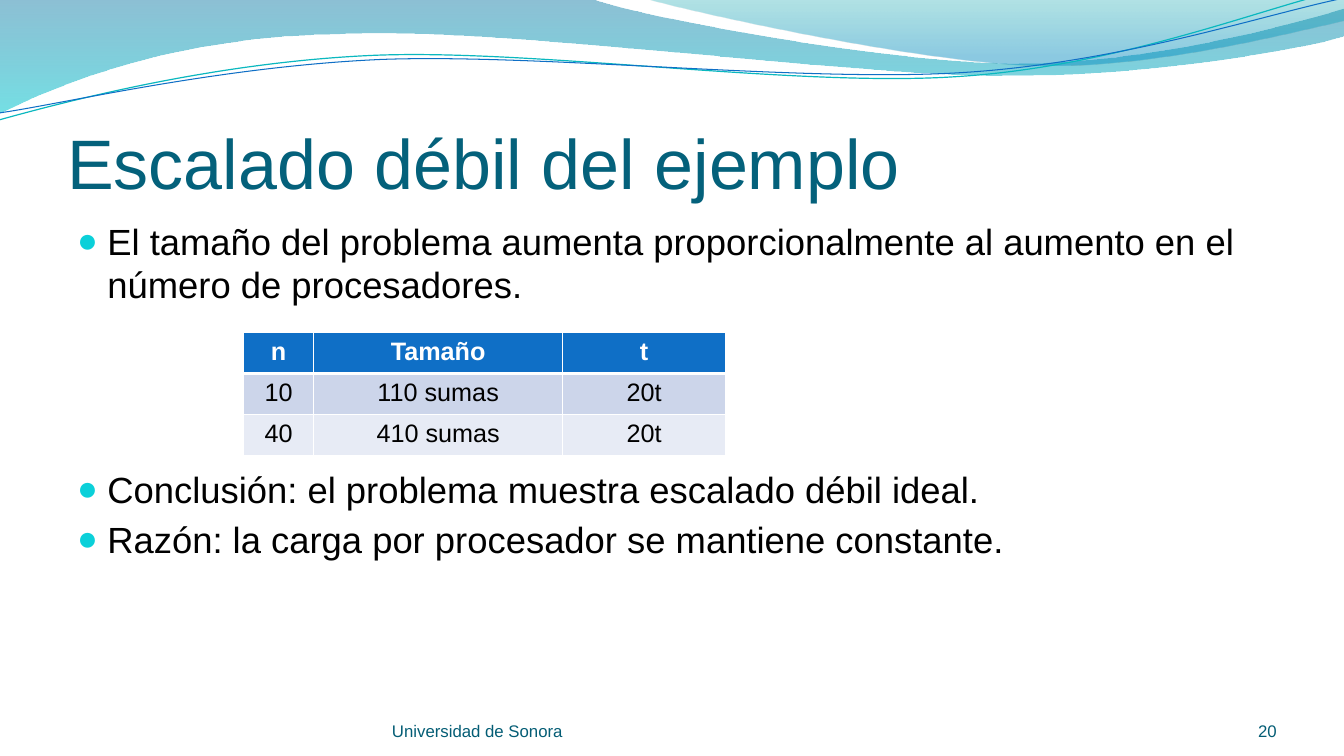
"""Build the weak scaling slide: waves, title, bullets, results table and footer."""
import math
from dataclasses import dataclass
from typing import NamedTuple

from lxml import etree
from pptx import Presentation, util as u
from pptx.dml.color import RGBColor
from pptx.enum import text as t
from pptx.oxml import ns

WIDTH, HEIGHT = u.Inches(13.33), u.Inches(7.5)


@dataclass(frozen=True)
class Theme:
    font: str = "Arial"
    title: str = "04617B"
    footer: str = "045D75"
    body: str = "000000"
    bullet: str = "0BD0D9"
    white: str = "FFFFFF"
    header: str = "0F6FC6"
    bands: tuple = ("CCD5EA", "E7EBF5")
    teal_line: str = "0AB8BF"
    title_size: float = 50
    body_size: float = 26
    table_size: float = 18
    footer_size: float = 12


THEME = Theme()


class Stop(NamedTuple):
    color: str
    position: float
    opacity: int


class Wave(NamedTuple):
    """Segments hold one point for a line and three for a Bézier curve, in percent."""
    start: tuple
    segments: tuple
    stops: tuple = ()
    line: str = ""
    weight: float = 0
    tilt: float = 0
    pivot: tuple = (0, 0)


class Label(NamedTuple):
    """A text box placed in percent of the slide."""
    text: str
    left: float
    top: float
    width: float
    height: float
    size: float
    color: str
    top_inset: float = 0
    align: t.PP_ALIGN = t.PP_ALIGN.LEFT


class Bullet(NamedTuple):
    text: str
    space_before: float


WAVES = (
    Wave((0, 0), (
        ((44, -0.13),),
        ((47.55, 2.27), (66.38, 8.4), (75.83, 8.4)),
        ((85.36, 8.4), (95.85, 3.47), (100, 1.2)),
        ((100.13, 4.8),),
        ((98.33, 5.87), (87, 10.13), (74.55, 10)),
        ((62.18, 10), (38.18, 3.73), (25.73, 4.53)),
        ((12.9, 4.8), (4.58, 11.07), (-0.08, 15.07)),
        ((0, 0),),
    ), stops=(Stop("0074A1", 0, 45), Stop("00C6CF", 1, 55))),
    Wave((47.93, -0.13), (
        ((50.93, 1.47), (68.18, 8.27), (76.88, 8.67)),
        ((85.58, 9.2), (96.15, 4.27), (100, 2.8)),
        ((100, 0),),
        ((47.93, -0.13),),
    ), stops=(Stop("00A1A9", 0, 30), Stop("008BBF", 0.8, 45))),
    Wave((-0.08, 15.87), (
        ((4.8, 13.47), (15.83, 8.27), (27.68, 7.33)),
        ((39.53, 6.4), (59.25, 11.6), (71.25, 10.13)),
        ((83.25, 8.8), (93.9, 1.07), (99.83, -1.33)),
    ), line=THEME.teal_line, weight=0.85, tilt=-2.7, pivot=(49.88, 7.67)),
    Wave((0, 14.93), (
        ((4.73, 13.73), (16.35, 8.8), (28.35, 7.87)),
        ((40.28, 7.07), (59.7, 10.93), (71.63, 9.6)),
        ((83.63, 8.27), (94.13, 1.87), (100.05, -0.27)),
    ), line=THEME.header, weight=0.75, tilt=-2.7, pivot=(50.03, 7.87)),
)
LABELS = (
    Label("Escalado débil del ejemplo", 5, 10.27, 90, 16.67,
          THEME.title_size, THEME.title, top_inset=0.05),
    Label("Universidad de Sonora", 29.17, 92.67, 36.67, 5.33, THEME.footer_size, THEME.footer),
    Label("20", 86.7, 92.67, 8.3, 5.33, THEME.footer_size, THEME.footer,
          align=t.PP_ALIGN.RIGHT),
)
BULLETS = (
    Bullet("El tamaño del problema aumenta proporcionalmente al aumento en el "
           "número de procesadores.", 4.7),
    Bullet("Conclusión: el problema muestra escalado débil ideal.", 114.8),
    Bullet("Razón: la carga por procesador se mantiene constante.", 4.7),
)
RESULTS = (("n", "Tamaño", "t"), ("10", "110 sumas", "20t"), ("40", "410 sumas", "20t"))
COLUMN_SHARES = (5.2, 18.55, 12.1)
ROW_SHARE = 5.42


def across(share: float) -> int:
    return round(WIDTH * share / 100)


def down(share: float) -> int:
    return round(HEIGHT * share / 100)


def rgb(color: str) -> RGBColor:
    return RGBColor.from_string(color)


def add_xml(parent, tag: str, **attributes):
    return etree.SubElement(parent, ns.qn(tag), attributes)


def level(point: tuple, wave: Wave) -> tuple:
    """Return the place of a point before the wave is tilted about its pivot."""
    center_x, center_y = across(wave.pivot[0]), down(wave.pivot[1])
    x, y = across(point[0]) - center_x, down(point[1]) - center_y
    sine, cosine = math.sin(math.radians(-wave.tilt)), math.cos(math.radians(wave.tilt))
    return round(center_x + cosine * x - sine * y), round(center_y + sine * x + cosine * y)


def bend(shape, wave: Wave) -> None:
    """Join each three steps of a curved segment into one Bézier curve."""
    steps = iter(list(shape.element.iter(ns.qn("a:lnTo"))))
    for segment in wave.segments:
        first, *others = [next(steps) for _ in segment]
        if others:
            first.tag = ns.qn("a:cubicBezTo")
            for other in others:
                first.append(other[0])
                other.getparent().remove(other)


def draw_wave(slide, wave: Wave) -> None:
    points = [level(point, wave) for segment in wave.segments for point in segment]
    builder = slide.shapes.build_freeform(*level(wave.start, wave))
    builder.add_line_segments(points, close=bool(wave.stops))
    shape = builder.convert_to_shape()
    bend(shape, wave)
    shape.rotation = wave.tilt
    shape.shadow.inherit = False
    if wave.line:
        shape.fill.background()
        shape.line.color.rgb = rgb(wave.line)
        shape.line.width = u.Pt(wave.weight)
        return
    shape.line.fill.background()
    shape.fill.gradient()
    shape.fill.gradient_angle = 270
    for target, stop in zip(shape.fill.gradient_stops, wave.stops):
        target.color.rgb = rgb(stop.color)
        target.position = stop.position
    for color, stop in zip(shape.element.iter(ns.qn("a:srgbClr")), wave.stops):
        add_xml(color, "a:alpha", val=str(stop.opacity * 1000))


def style_font(paragraph, size: float, color: str, bold: bool = False) -> None:
    for run in paragraph.runs:
        run.font.name, run.font.size, run.font.bold = THEME.font, u.Pt(size), bold
        run.font.color.rgb = rgb(color)


def draw_label(slide, label: Label) -> None:
    frame = slide.shapes.add_textbox(across(label.left), down(label.top), across(label.width),
                                     down(label.height)).text_frame
    frame.word_wrap = True
    frame.vertical_anchor = t.MSO_ANCHOR.BOTTOM
    frame.margin_left = frame.margin_right = frame.margin_bottom = 0
    frame.margin_top = u.Inches(label.top_inset)
    frame.text = label.text
    frame.paragraphs[0].alignment = label.align
    style_font(frame.paragraphs[0], label.size, label.color)


def draw_bullets(slide) -> None:
    frame = slide.shapes.add_textbox(across(5), down(28.27), across(90), down(64)).text_frame
    frame.word_wrap = True
    frame.text = "\n".join(bullet.text for bullet in BULLETS)
    indent = u.Inches(0.3)
    for paragraph, bullet in zip(frame.paragraphs, BULLETS):
        paragraph.space_before = u.Pt(bullet.space_before)
        style_font(paragraph, THEME.body_size, THEME.body)
        properties = paragraph._p.get_or_add_pPr()
        properties.set("marL", str(indent))
        properties.set("indent", str(-indent))
        add_xml(add_xml(properties, "a:buClr"), "a:srgbClr", val=THEME.bullet)
        add_xml(properties, "a:buSzPct", val="95000")
        add_xml(properties, "a:buFont", typeface=THEME.font)
        add_xml(properties, "a:buChar", char="●")


def set_borders(cell, top: float, bottom: float) -> None:
    properties = cell._tc.get_or_add_tcPr()
    for tag, points in (("a:lnL", 1), ("a:lnR", 1), ("a:lnT", top), ("a:lnB", bottom)):
        border = add_xml(properties, tag, w=str(u.Pt(points)))
        add_xml(add_xml(border, "a:solidFill"), "a:srgbClr", val=THEME.white)


def draw_results(slide) -> None:
    table = slide.shapes.add_table(len(RESULTS), len(COLUMN_SHARES), across(18.13), down(44),
                                   across(sum(COLUMN_SHARES)),
                                   down(ROW_SHARE * len(RESULTS))).table
    for column, share in zip(table.columns, COLUMN_SHARES):
        column.width = across(share)
    fills = (THEME.header, *THEME.bands)
    for row, values in enumerate(RESULTS):
        table.rows[row].height = down(ROW_SHARE)
        for column, value in enumerate(values):
            cell = table.cell(row, column)
            set_borders(cell, 3 if row == 1 else 1, 3 if row == 0 else 1)
            cell.fill.solid()
            cell.fill.fore_color.rgb = rgb(fills[row])
            cell.text_frame.text = value
            paragraph = cell.text_frame.paragraphs[0]
            paragraph.alignment = t.PP_ALIGN.CENTER
            style_font(paragraph, THEME.table_size, THEME.body if row else THEME.white, row == 0)


def main() -> None:
    presentation = Presentation()
    presentation.slide_width, presentation.slide_height = WIDTH, HEIGHT
    slide = presentation.slides.add_slide(presentation.slide_layouts[6])
    for wave in WAVES:
        draw_wave(slide, wave)
    for label in LABELS:
        draw_label(slide, label)
    draw_bullets(slide)
    draw_results(slide)
    presentation.save("out.pptx")


if __name__ == "__main__":
    main()
